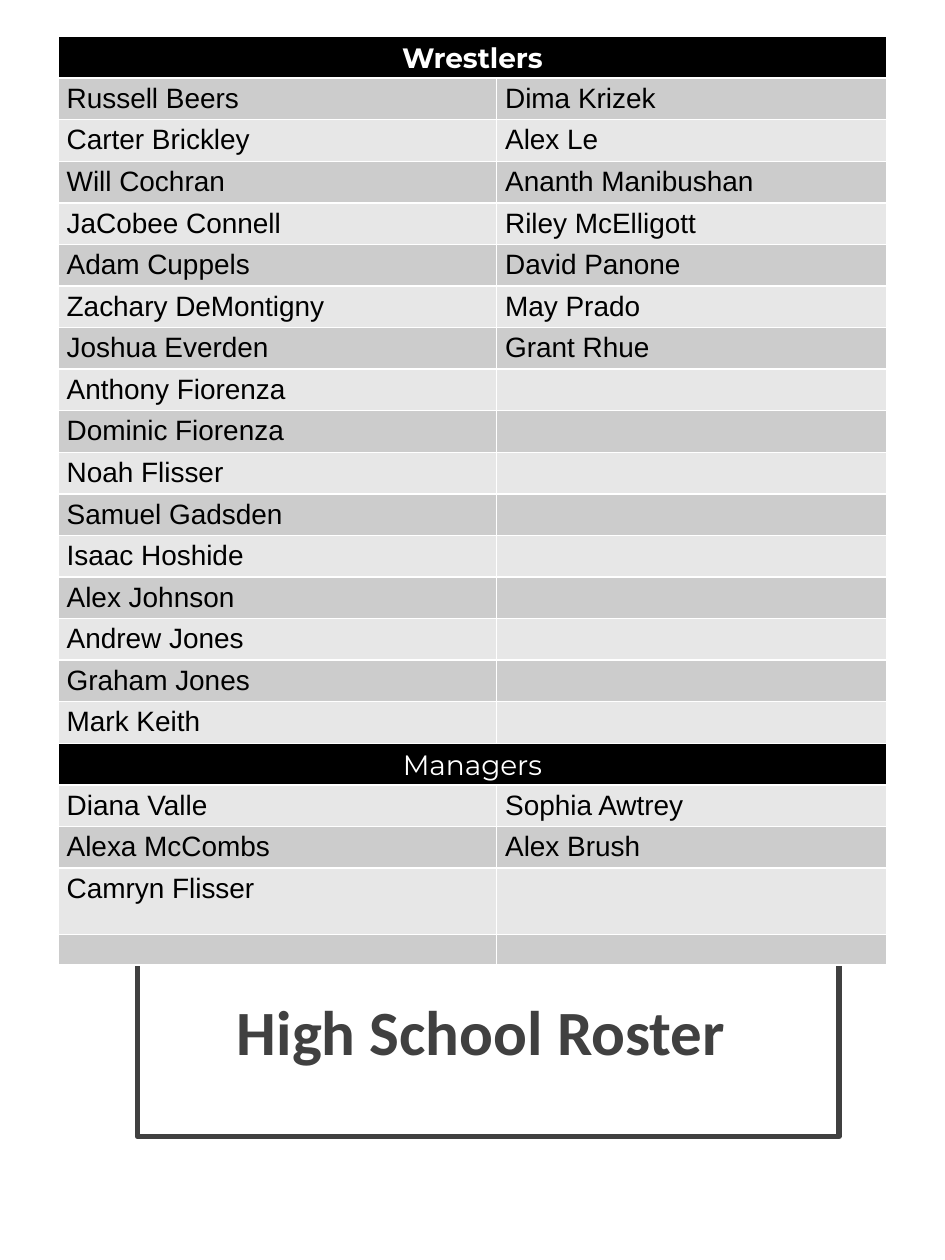
from itertools import zip_longest

from lxml import etree
from pptx import Presentation
from pptx.dml.color import RGBColor
from pptx.enum.shapes import MSO_SHAPE
from pptx.enum.text import MSO_ANCHOR, PP_ALIGN
from pptx.oxml.ns import qn
from pptx.util import Inches, Pt

RECT = MSO_SHAPE.RECTANGLE
MIDDLE = MSO_ANCHOR.MIDDLE
CENTER = PP_ALIGN.CENTER

COLORS = {"white": "FFFFFF", "black": "000000", "title": "404040",
          "dark": "CCCCCC", "light": "E7E7E7"}

TITLE = "High School Roster "
ROSTER = [
    ("Wrestlers",
     ["Russell Beers", "Carter Brickley", "Will Cochran", "JaCobee Connell",
      "Adam Cuppels", "Zachary DeMontigny", "Joshua Everden", "Anthony Fiorenza",
      "Dominic Fiorenza", "Noah Flisser", "Samuel Gadsden", "Isaac Hoshide",
      "Alex Johnson", "Andrew Jones", "Graham Jones", "Mark Keith"],
     ["Dima Krizek", "Alex Le", "Ananth Manibushan", "Riley McElligott",
      "David Panone", "May Prado", "Grant Rhue"]),
    ("Managers",
     ["Diana Valle", "Alexa McCombs", "Camryn Flisser", ""],
     ["Sophia Awtrey", "Alex Brush"]),
]
COLUMN_WIDTHS = [3.48, 3.1]
ROW_HEIGHT = 0.33
LAST_HEIGHTS = [0.53, 0.24]


def rgb(name):
    return RGBColor.from_string(COLORS[name])


def style(p, font, size, color, bold=False):
    p.font.name = font
    p.font.size = Pt(size)
    p.font.bold = bold
    p.font.color.rgb = rgb(color)


def fill_cell(cell, text, fill):
    cell.margin_left = cell.margin_right = Inches(0.07)
    cell.margin_top = Inches(0.04)
    cell.margin_bottom = Inches(0.02)
    cell.fill.solid()
    cell.fill.fore_color.rgb = rgb(fill)
    p = cell.text_frame.paragraphs[0]
    if text:
        p.text = text
    else:
        etree.SubElement(p._p, qn("a:endParaRPr"), sz="800")
    return p


prs = Presentation()
prs.slide_width, prs.slide_height = Inches(7.5), Inches(10)
s = prs.slides.add_slide(prs.slide_layouts[6])

box = s.shapes.add_shape(RECT, Inches(1.09), Inches(7.41), Inches(5.57), Inches(1.61))
box.shadow.inherit = False
box.fill.solid()
box.fill.fore_color.rgb = rgb("white")
box.line.color.rgb = rgb("title")
box.line.width = Pt(3)
tf = box.text_frame
tf.word_wrap = True
tf.vertical_anchor = MIDDLE
p = tf.paragraphs[0]
p.text = TITLE
p.alignment = CENTER
p.line_spacing = 0.9
style(p, "Calibri", 36, "title", True)

rows = []
for heading, left, right in ROSTER:
    rows.append((heading, None))
    rows += zip_longest(left, right, fillvalue="")
heights = [ROW_HEIGHT] * (len(rows) - len(LAST_HEIGHTS)) + LAST_HEIGHTS

table = s.shapes.add_table(len(rows), len(COLUMN_WIDTHS), Inches(0.46), Inches(0.29),
                           Inches(sum(COLUMN_WIDTHS)), Inches(sum(heights))).table
for column, width in zip(table.columns, COLUMN_WIDTHS):
    column.width = Inches(width)

for i, (names, height) in enumerate(zip(rows, heights)):
    table.rows[i].height = Inches(height)
    is_heading = names[1] is None
    if is_heading:
        table.cell(i, 0).merge(table.cell(i, 1))
    for j, name in enumerate(names):
        fill = "black" if is_heading else "dark" if i % 2 else "light"
        p = fill_cell(table.cell(i, j), name, fill)
        if is_heading and name:
            p.alignment = CENTER
            style(p, "Montserrat", 16, "white", i == 0)
        elif name:
            style(p, "Arial", 16, "black")

prs.save("out.pptx")
